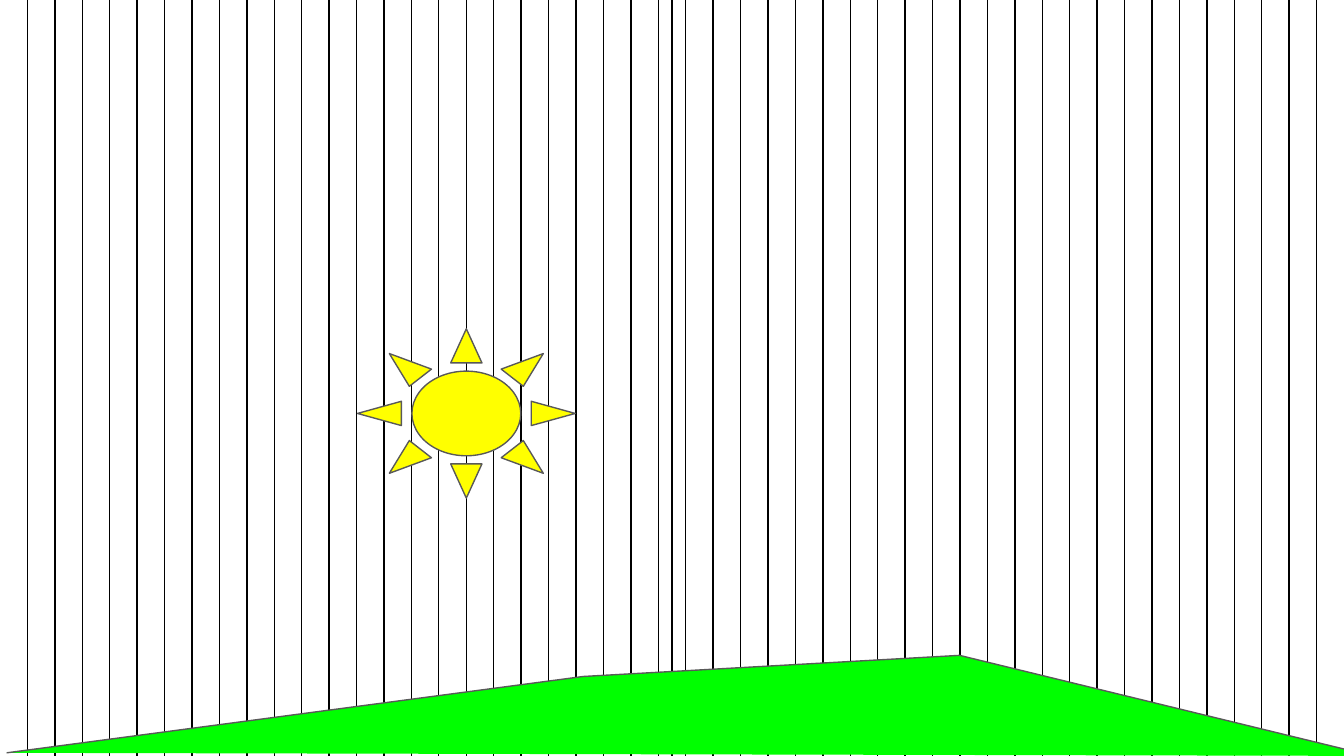
from dataclasses import dataclass

from lxml import etree
from pptx import Presentation
from pptx.dml.color import RGBColor
from pptx.enum.shapes import MSO_CONNECTOR, MSO_SHAPE
from pptx.oxml.ns import qn
from pptx.util import Inches, Pt

STRAIGHT = MSO_CONNECTOR.STRAIGHT
SUN = MSO_SHAPE.SUN
BLANK_LAYOUT = 6
COLUMNS = 49


@dataclass(frozen=True)
class Theme:
    background: str = "FFFFFF"
    stripe: str = "000000"
    outline: str = "595959"
    sun: str = "FFFF00"
    grass: str = "00FF00"
    line_width: float = 0.75


class Scene:
    def __init__(self, deck, theme):
        self.theme = theme
        self.width = deck.slide_width
        self.height = deck.slide_height
        self.page = deck.slides.add_slide(deck.slide_layouts[BLANK_LAYOUT])
        self.paint(self.page.background.fill, theme.background)

    def across(self, percent):
        return round(self.width * percent / 100)

    def down(self, percent):
        return round(self.height * percent / 100)

    def paint(self, fill, color):
        fill.solid()
        fill.fore_color.rgb = RGBColor.from_string(color)

    def draw_line(self, line, color):
        self.paint(line.fill, color)
        line.width = Pt(self.theme.line_width)

    def format_shape(self, shape, color):
        shape.shadow.inherit = False
        self.paint(shape.fill, color)
        self.draw_line(shape.line, self.theme.outline)

    def stripe(self, column):
        left = round(self.width * column / COLUMNS)
        line = self.page.shapes.add_connector(STRAIGHT, left, 0, left, self.height)
        self.draw_line(line.line, self.theme.stripe)
        etree.SubElement(line._element.spPr, qn("a:effectLst"))

    def sun(self, left, top, width, height):
        sun = self.page.shapes.add_shape(
            SUN, self.across(left), self.down(top), self.across(width), self.down(height)
        )
        sun.adjustments[0] = 0.25
        self.format_shape(sun, self.theme.sun)

    def hill(self, points):
        start, *rest = [(self.across(x), self.down(y)) for x, y in points]
        builder = self.page.shapes.build_freeform(*start)
        builder.add_line_segments(rest, close=False)
        self.format_shape(builder.convert_to_shape(), self.theme.grass)


def main():
    deck = Presentation()
    width = Inches(10)
    for name, value in {"slide_width": width, "slide_height": width * 9 // 16}.items():
        setattr(deck, name, value)

    scene = Scene(deck, Theme())
    for column in range(1, COLUMNS):
        scene.stripe(column)
    scene.stripe(COLUMNS / 2)
    scene.sun(left=26.6, top=43.5, width=16.2, height=22.4)
    scene.hill([(0.5, 99.6), (43.4, 89.5), (71.4, 86.7), (102.1, 100)])
    deck.save("out.pptx")


if __name__ == "__main__":
    main()
